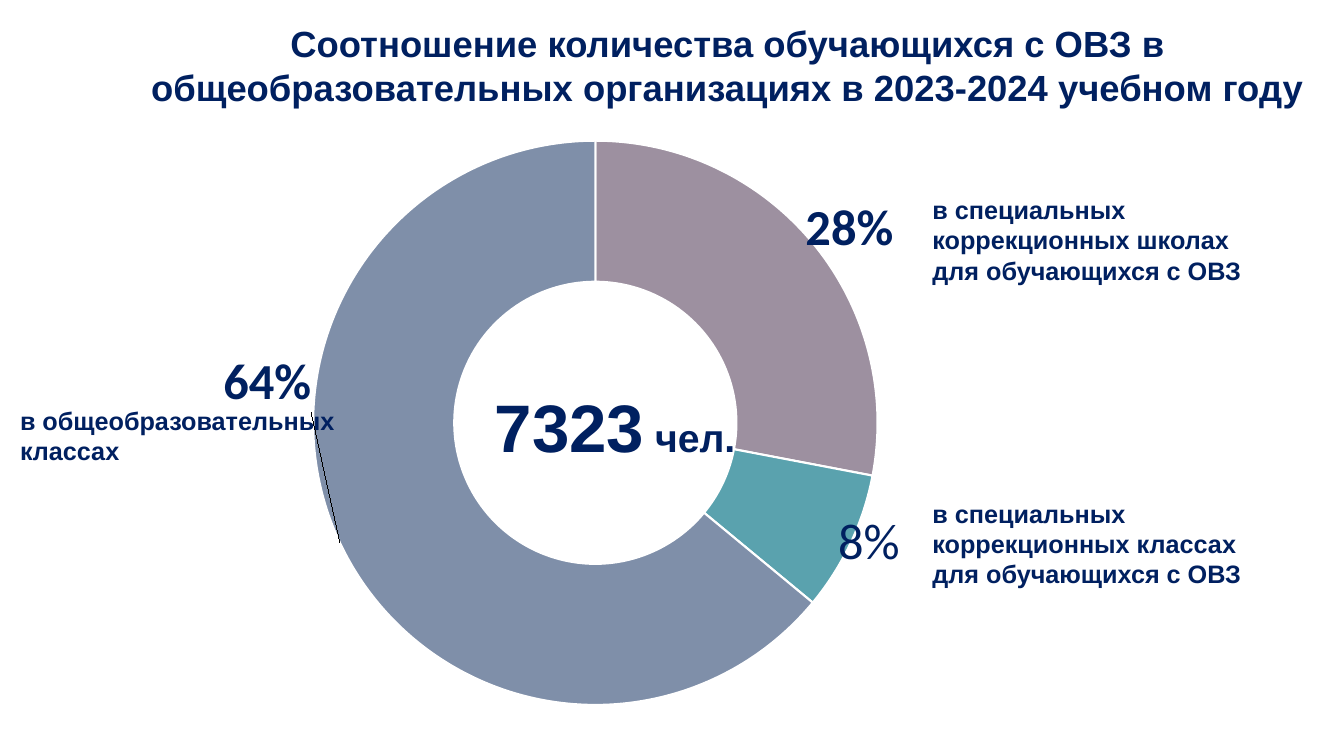
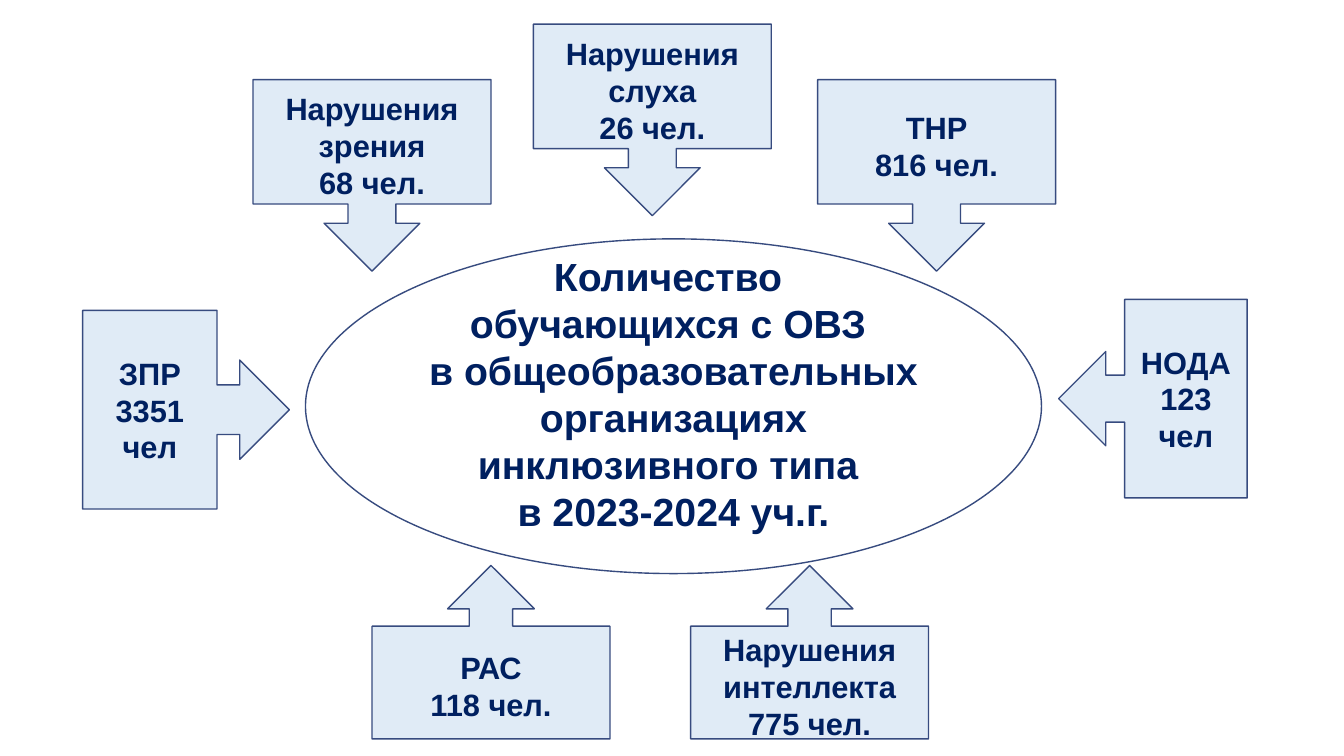
from lxml import etree
from pptx import Presentation
from pptx.chart.data import CategoryChartData
from pptx.dml.color import RGBColor
from pptx.enum.chart import XL_CHART_TYPE
from pptx.enum.shapes import MSO_SHAPE
from pptx.enum.text import MSO_ANCHOR, PP_ALIGN
from pptx.oxml.ns import qn
from pptx.util import Inches, Pt

LEFT, CENTER = PP_ALIGN.LEFT, PP_ALIGN.CENTER
MIDDLE = MSO_ANCHOR.MIDDLE
DOUGHNUT = XL_CHART_TYPE.DOUGHNUT
ELLIPSE = MSO_SHAPE.OVAL
DOWN = MSO_SHAPE.DOWN_ARROW_CALLOUT
UP = MSO_SHAPE.UP_ARROW_CALLOUT
RIGHT_ARROW = MSO_SHAPE.RIGHT_ARROW_CALLOUT
LEFT_ARROW = MSO_SHAPE.LEFT_ARROW_CALLOUT

NAVY, OUTLINE, PALE, WHITE = "002060", "374B7F", "E0EBF6", "FFFFFF"


def rgb(value):
    return RGBColor.from_string(value)


def write(tf, paragraphs, align):
    """Fill a frame with paragraphs, each a list of (text, size) runs."""
    tf.word_wrap = True
    for i, runs in enumerate(paragraphs):
        p = tf.paragraphs[0] if i == 0 else tf.add_paragraph()
        p.alignment = align
        for text, size in runs:
            r = p.add_run()
            r.text = text
            r.font.name, r.font.size, r.font.bold = "Arial", Pt(size), True
            r.font.color.rgb = rgb(NAVY)


prs = Presentation()
prs.slide_width, prs.slide_height = Inches(13.33), Inches(7.5)
blank = prs.slide_layouts[6]

# Slide 1: doughnut of shares
s = prs.slides.add_slide(blank)

data = CategoryChartData(number_format="0%")
data.categories = ["1", "2", "3"]
data.add_series("Series 1", [0.28, 0.08, 0.64])
chart = s.shapes.add_chart(
    DOUGHNUT, Inches(1.39), Inches(1.27), Inches(9.03), Inches(5.91), data).chart
chart.has_legend = False
chart.has_title = False
chart.font.name, chart.font.size = "Calibri", Pt(10)


def set_layout(parent, index, **values):
    """Insert a manual chart layout as the child at the given index."""
    for old in parent.findall(qn("c:layout")):
        parent.remove(old)
    layout = etree.Element(qn("c:layout"))
    manual = etree.SubElement(layout, qn("c:manualLayout"))
    for tag, value in values.items():
        etree.SubElement(manual, qn("c:" + tag)).set("val", str(value))
    parent.insert(index, layout)


plot_area = chart.plots[0]._element.getparent()
set_layout(plot_area, 0, layoutTarget="inner", xMode="edge", yMode="edge",
           x=0.19, y=0.02, w=0.62, h=0.95)

# colour, label bold, label shift from the middle of the ring
slices = [
    ("9D90A0", True, 0.1, -0.1),
    ("5AA2AE", False, 0.09, 0.05),
    ("7F8FA9", True, -0.15, -0.22),
]
series = chart.plots[0].series[0]
for i, (color, bold, dx, dy) in enumerate(slices):
    point = series.points[i]
    point.format.fill.solid()
    point.format.fill.fore_color.rgb = rgb(color)
    point.format.line.color.rgb = rgb(WHITE)
    point.format.line.width = Pt(1.5)
    font = point.data_label.font
    font.name, font.size, font.bold = "Calibri", Pt(36), bold
    font.color.rgb = rgb(NAVY)
    label = series._element.findall(".//" + qn("c:dLbl"))[i]
    set_layout(label, 1, x=dx, y=dy)

captions = [
    (1.27, 0.16, 11.9, 0.98, CENTER,
     [("Соотношение количества обучающихся с ОВЗ в общеобразовательных "
       "организациях в 2023-2024 учебном году", 26)]),
    (4.64, 3.77, 2.92, 0.91, CENTER, [("7323", 48), (" чел.", 28)]),
    (9.15, 1.88, 3.4, 1.01, LEFT,
     [("в специальных коррекционных школах для обучающихся с ОВЗ", 18)]),
    (9.15, 4.89, 3.4, 1.01, LEFT,
     [("в специальных коррекционных классах для обучающихся с ОВЗ", 18)]),
    (0.1, 3.97, 3.38, 0.71, LEFT, [("в общеобразовательных классах", 18)]),
]
for x, y, w, h, align, runs in captions:
    box = s.shapes.add_textbox(Inches(x), Inches(y), Inches(w), Inches(h))
    write(box.text_frame, [runs], align)

# Slide 2: groups of pupils pointing at the central ellipse
s = prs.slides.add_slide(blank)

center_lines = [
    "Количество ",
    "обучающихся с ОВЗ ",
    "в общеобразовательных организациях инклюзивного типа ",
    "в 2023-2024 уч.г.",
]
# kind, left, top, width, height, fill, text size, top and bottom margin, lines
figures = [(ELLIPSE, 3.03, 2.37, 7.3, 3.32, WHITE, 28, 0.05, 0.31, center_lines)]
for kind, x, y, h, name, count in [
    (DOWN, 2.51, 0.79, 1.9, "Нарушения зрения", "68 чел."),
    (DOWN, 5.29, 0.24, 1.9, "Нарушения слуха", "26 чел."),
    (DOWN, 8.11, 0.79, 1.9, "ТНР", "816 чел."),
    (UP, 3.69, 5.61, 1.72, "РАС", "118 чел."),
    (UP, 6.85, 5.61, 1.72, "Нарушения интеллекта", "775 чел."),
]:
    figures.append((kind, x, y, 2.36, h, PALE, 22, 0.12, 0.05, [name, count]))
for kind, x, y, w, name, count in [
    (RIGHT_ARROW, 0.82, 3.08, 2.05, "ЗПР", "3351 чел"),
    (LEFT_ARROW, 10.5, 2.97, 1.87, "НОДА", "123 чел"),
]:
    figures.append((kind, x, y, w, 1.97, PALE, 22, 0.05, 0.05, [name, count]))

for kind, x, y, w, h, fill, size, top, bottom, lines in figures:
    sp = s.shapes.add_shape(kind, Inches(x), Inches(y), Inches(w), Inches(h))
    sp.shadow.inherit = False
    sp.fill.solid()
    sp.fill.fore_color.rgb = rgb(fill)
    sp.line.color.rgb = rgb(OUTLINE)
    sp.line.width = Pt(1)
    tf = sp.text_frame
    tf.vertical_anchor = MIDDLE
    tf.margin_top, tf.margin_bottom = Inches(top), Inches(bottom)
    write(tf, [[(line, size)] for line in lines], CENTER)

prs.save("out.pptx")
